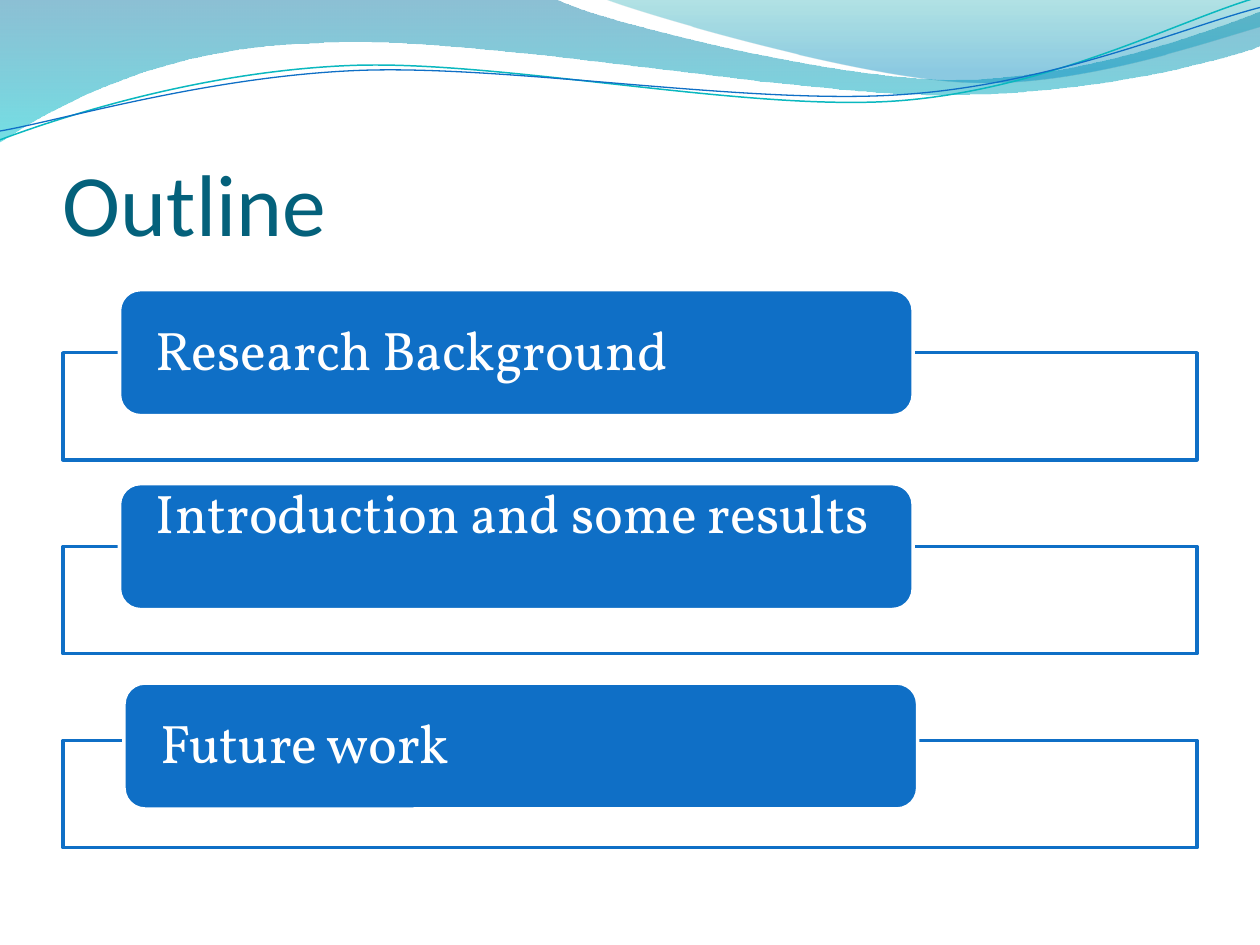
from math import cos, sin, radians
from pptx import Presentation
from pptx.util import Cm, Pt
from pptx.dml.color import RGBColor as RGB
from pptx.enum.shapes import MSO_SHAPE as Shape
from pptx.enum.text import MSO_ANCHOR as Anchor, PP_ALIGN as Align
from pptx.oxml.ns import qn
from lxml import etree

BLUE = RGB(0x0F, 0x6F, 0xC6)
TEAL = RGB(0x0A, 0xB8, 0xBF)
DEEP = RGB(0x04, 0x61, 0x7B)
WHITE = RGB(0xFF, 0xFF, 0xFF)
SEA = RGB(0x00, 0x74, 0xA1)
CYAN = RGB(0x00, 0xC6, 0xCF)
MINT = RGB(0x00, 0xA1, 0xA9)
SKY = RGB(0x00, 0x8B, 0xBF)
INCH = 2.54
TILT = 2.7

deck = Presentation()
deck.slide_width, deck.slide_height = Cm(25.4), Cm(19.05)
slide = deck.slides.add_slide(deck.slide_layouts[6])
shapes = slide.shapes


def draw(start, parts, closed, tilt=0, mid=(0, 0)):
    c, s = cos(radians(tilt)), sin(radians(tilt))
    dots = [start] + [part[i:i + 2] for part in parts for i in range(0, len(part), 2)]
    gaps = [(x - mid[0], y - mid[1]) for x, y in dots]
    spots = [(Cm((mid[0] + x * c - y * s) * INCH), Cm((mid[1] + x * s + y * c) * INCH))
             for x, y in gaps]
    maker = shapes.build_freeform(*spots[0], scale=1.0)
    maker.add_line_segments(spots[1:], close=closed)
    curve = maker.convert_to_shape()
    curve.shadow.inherit = False
    curve.rotation = -tilt
    lines = iter(list(curve._element.iter(qn("a:lnTo"))))
    for part in parts:
        group = [next(lines) for _ in range(len(part) // 2)]
        if len(group) == 3:
            bend = etree.Element(qn("a:cubicBezTo"))
            group[0].addprevious(bend)
            for line in group:
                bend.append(line[0])
                line.getparent().remove(line)
    return curve


def write(shape, text, font, anchor, pads):
    frame = shape.text_frame
    settings = dict(zip(("margin_left", "margin_top", "margin_right", "margin_bottom"), map(Cm, pads)),
                    word_wrap=True, vertical_anchor=anchor)
    for name, value in settings.items():
        setattr(frame, name, value)
    line = frame.paragraphs[0]
    line.alignment = Align.LEFT
    run = line.add_run()
    run.text = text
    run.font.color.rgb = font.pop("color")
    for name, value in font.items():
        setattr(run.font, name, value)
    return line


waves = [
    ((0, 0), [(4.4, -0.01), (4.76, 0.17, 6.64, 0.63, 7.58, 0.63),
              (8.53, 0.63, 9.58, 0.26, 10, 0.09), (10.01, 0.36),
              (9.83, 0.44, 8.7, 0.76, 7.46, 0.75), (6.22, 0.75, 3.82, 0.28, 2.57, 0.34),
              (1.29, 0.36, 0.46, 0.83, -0.01, 1.13), (0, 0)],
     [(0, SEA, 45), (1, CYAN, 55)]),
    ((4.79, -0.01), [(5.09, 0.11, 6.82, 0.62, 7.69, 0.65),
                     (8.56, 0.69, 9.61, 0.32, 10, 0.21), (10, 0), (4.79, -0.01)],
     [(0, MINT, 30), (0.8, SKY, 45)]),
]
for start, parts, stops in waves:
    wave = draw(start, parts, True)
    wave.line.fill.background()
    wave.fill.gradient()
    wave.fill.gradient_angle = 270
    for stop, (place, color, alpha) in zip(wave.fill.gradient_stops, stops):
        stop.position = place
        stop.color.rgb = color
    tints = list(wave._element.iter(qn("a:srgbClr")))
    for tint, (place, color, alpha) in zip(tints, stops):
        etree.SubElement(tint, qn("a:alpha")).set("val", str(alpha * 1000))

threads = [
    ((0, 1.11), [(0.48, 0.93, 1.58, 0.57, 2.77, 0.52), (3.95, 0.47, 5.93, 0.89, 7.13, 0.8),
                 (8.33, 0.71, 9.38, 0.15, 9.98, -0.02)], (4.99, 0.57), TEAL, 0.85),
    ((0, 1.04), [(0.47, 0.96, 1.64, 0.61, 2.83, 0.56), (4.03, 0.51, 5.97, 0.84, 7.17, 0.75),
                 (8.36, 0.67, 9.41, 0.21, 10, 0.06)], (5, 0.59), BLUE, 0.75),
]
for start, parts, mid, color, width in threads:
    thread = draw(start, parts, False, TILT, mid)
    thread.fill.background()
    thread.line.color.rgb = color
    thread.line.width = Pt(width)

title = shapes.add_textbox(Cm(1.27), Cm(1.96), Cm(22.86), Cm(3.17))
write(title, "Outline", dict(name="Calibri", size=Pt(50), color=DEEP), Anchor.BOTTOM, (0, 0.13, 0, 0))

topics = [("Research Background", 2.41, 5.84, 0),
          ("Introduction and some results", 2.41, 9.75, 1.22),
          ("Future work", 2.5, 13.77, 0)]
for row, (text, left, top, lift) in enumerate(topics):
    frame = shapes.add_shape(Shape.RECTANGLE, Cm(1.27), Cm(7.11 + 3.91 * row), Cm(22.86), Cm(2.16))
    card = shapes.add_shape(Shape.ROUNDED_RECTANGLE, Cm(left), Cm(top), Cm(16), Cm(2.54))
    for shape, fill, edge in ((frame, WHITE, BLUE), (card, BLUE, WHITE)):
        shape.shadow.inherit = False
        shape.fill.solid()
        shape.fill.fore_color.rgb = fill
        shape.line.color.rgb = edge
        shape.line.width = Pt(2)
    line = write(card, text, dict(name="Vollkorn", size=Pt(31), color=WHITE),
                 Anchor.MIDDLE, (0.61, 0, 0.3, lift))
    line.line_spacing = 0.9

deck.save("out.pptx")
